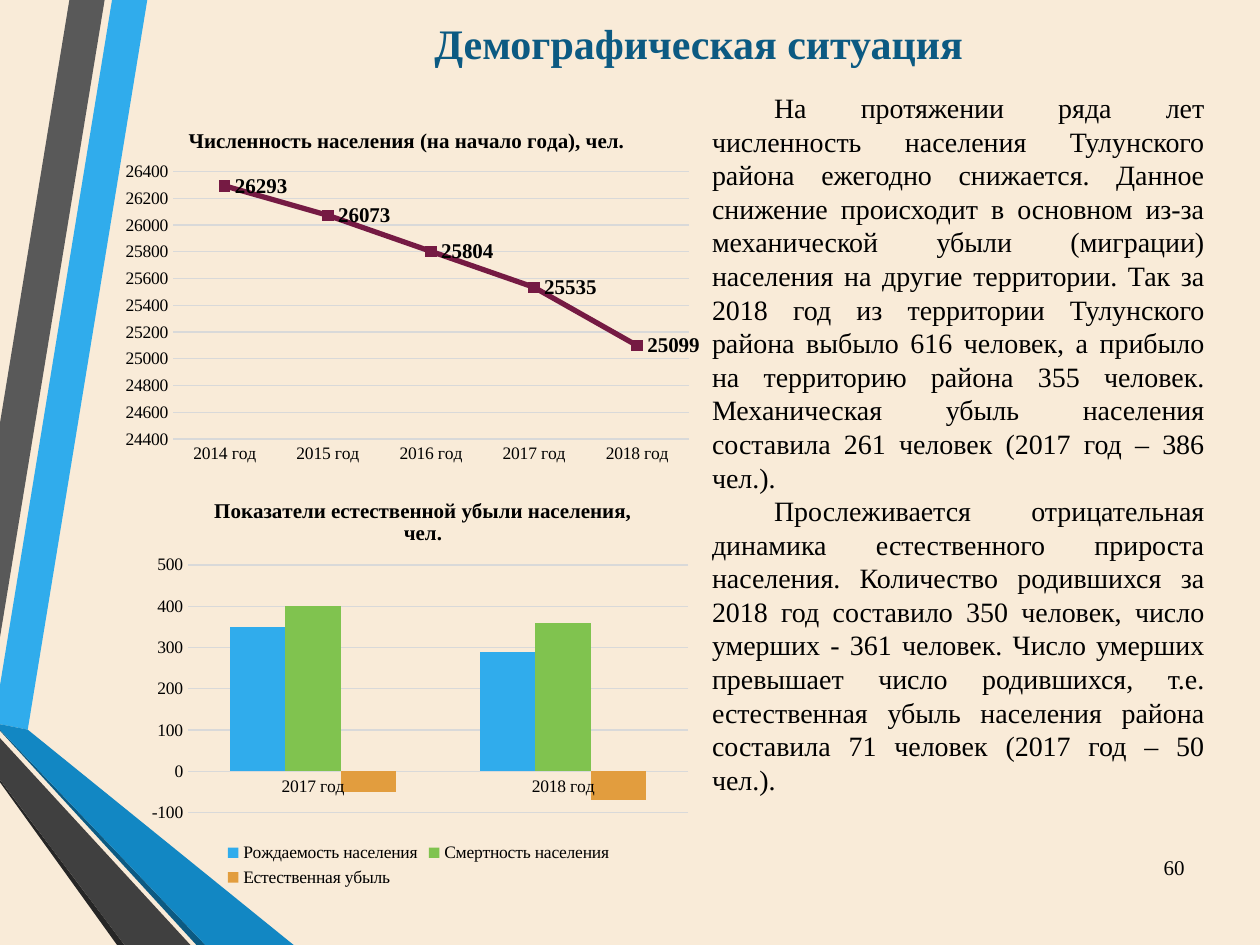
from lxml import etree
from pptx import Presentation, util as u
from pptx.chart.data import CategoryChartData
from pptx.dml.color import RGBColor
from pptx.enum import chart as c, text as t
from pptx.oxml import parse_xml
from pptx.oxml.ns import nsdecls, qn

Cm, Pt = u.Cm, u.Pt
COLORS = {
    "background": "F9EBD8", "text": "000000", "title": "0C5A82", "grid": "D9D9D9",
    "sky": "30ACEC", "blue": "1287C3", "gray": "595959", "dark": "404040",
    "black": "262626", "green": "80C34F", "orange": "E29D3E", "plum": "751A43",
}
RGB = {name: RGBColor.from_string(value) for name, value in COLORS.items()}


def set_font(font, size, color="text", bold=False):
    values = {"name": "Times New Roman", "size": Pt(size), "bold": bold}
    for name, value in values.items():
        setattr(font, name, value)
    font.color.rgb = RGB[color]


def set_layout(element, x, y, size=None):
    """Place a chart title or plot area by fractions of the chart."""
    for old in element.findall(qn("c:layout")):
        element.remove(old)
    target = '<c:layoutTarget val="inner"/>' if size else ""
    fractions = {"x": x, "y": y}
    if size:
        fractions.update(w=size[0], h=size[1])
    modes = '<c:xMode val="edge"/><c:yMode val="edge"/>'
    places = "".join(f'<c:{key} val="{value}"/>' for key, value in fractions.items())
    layout = parse_xml(f'<c:layout {nsdecls("c")}><c:manualLayout>{target}{modes}{places}'
                       "</c:manualLayout></c:layout>")
    text = element.find(qn("c:tx"))
    element.insert(0 if text is None else element.index(text) + 1, layout)


presentation = Presentation()
presentation.slide_width, presentation.slide_height = Cm(25.4), Cm(19.05)
slide = presentation.slides.add_slide(presentation.slide_layouts[1])
slide.background.fill.solid()
slide.background.fill.fore_color.rgb = RGB["background"]

# Ribbons along the left edge, corners in centimetres
ribbons = [
    ("sky", [(0, 13.82), (0, 14.6), (0.56, 14.71), (2.97, 0), (2.26, 0)]),
    ("gray", [(2.11, 0), (1.4, 0), (0, 8.53), (0, 12.85)]),
    ("black", [(0, 15.72), (0, 15.77), (2.36, 19.05), (2.51, 19.05)]),
    ("title", [(0, 14.71), (0, 14.73), (3.96, 19.05), (4.14, 19.05)]),
    ("blue", [(0, 14.71), (4.14, 19.05), (5.92, 19.05), (0.56, 14.71), (0, 14.6)]),
    ("dark", [(0, 15.72), (2.51, 19.05), (3.84, 19.05), (0, 14.88)]),
]
for color, corners in ribbons:
    points = [(Cm(x), Cm(y)) for x, y in corners]
    builder = slide.shapes.build_freeform(*points[0])
    builder.add_line_segments(points[1:], close=True)
    shape = builder.convert_to_shape()
    shape.shadow.inherit = False
    shape.fill.solid()
    shape.fill.fore_color.rgb = RGB[color]
    shape.line.fill.background()

# Title, body text and page number
body_text = [
    "На протяжении ряда лет численность населения Тулунского района ежегодно снижается. "
    "Данное снижение происходит в основном из-за механической убыли (миграции) населения "
    "на другие территории. Так за 2018 год из территории Тулунского района выбыло 616 человек, "
    "а прибыло на территорию района 355 человек. Механическая убыль населения составила "
    "261 человек (2017 год – 386 чел.).",
    "Прослеживается отрицательная динамика естественного прироста населения. Количество "
    "родившихся за 2018 год составило 350 человек, число умерших - 361 человек. Число умерших "
    "превышает число родившихся, т.е. естественная убыль населения района составила "
    "71 человек (2017 год – 50 чел.).",
]
title, body = slide.placeholders
number = slide.shapes.add_textbox(0, 0, 0, 0)
middle, top = t.MSO_ANCHOR.MIDDLE, t.MSO_ANCHOR.TOP
text_boxes = [
    (title, (2.77, 0, 22.63, 1.73), ["Демографическая ситуация"], middle,
     t.PP_ALIGN.CENTER, (24, "title", True)),
    (body, (14.1, 1.7, 10.44, 15), body_text, top, t.PP_ALIGN.JUSTIFY, (16,)),
    (number, (22.94, 16.97, 1.19, 1.02), ["60"], middle, t.PP_ALIGN.RIGHT, (12,)),
]
for shape, place, lines, anchor, alignment, font in text_boxes:
    shape.left, shape.top, shape.width, shape.height = map(Cm, place)
    frame = shape.text_frame
    frame.text = "\n".join(lines)
    frame.word_wrap, frame.auto_size = True, t.MSO_AUTO_SIZE.NONE
    frame.vertical_anchor = anchor
    for paragraph in frame.paragraphs:
        paragraph.alignment = alignment
        paragraph.space_before = Pt(0)
        set_font(paragraph.runs[0].font, *font)
for paragraph in body.text_frame.paragraphs:
    paragraph.line_spacing = Pt(19.2)
    properties = paragraph._p.get_or_add_pPr()
    properties.set("marL", "0")
    properties.set("indent", str(Cm(1.25)))
    etree.SubElement(properties, qn("a:buNone"))

# Charts
charts = [
    {"type": c.XL_CHART_TYPE.COLUMN_CLUSTERED, "place": (2.77, 9.53, 11.33, 8.46),
     "title": "Показатели естественной убыли населения, чел.", "title_at": (0.13, 0.05),
     "plot": (0.09, 0.22, (0.89, 0.59)), "scale": (-100, 500, 100),
     "categories": ["2017 год", "2018 год"],
     "series": [("Рождаемость населения", [350, 290], "sky"),
                ("Смертность населения", [400, 360], "green"),
                ("Естественная убыль", [-50, -70], "orange")]},
    {"type": c.XL_CHART_TYPE.LINE_MARKERS_STACKED, "place": (2.31, 2.13, 11.81, 7.39),
     "title": "Численность населения (на начало года), чел.", "title_at": (0.12, 0.05),
     "plot": (0.1, 0.18, (0.88, 0.73)), "scale": (24400, 26400, 200),
     "categories": [f"{year} год" for year in range(2014, 2019)],
     "series": [("Численность населения", [26293, 26073, 25804, 25535, 25099], "plum")]},
]
for item in charts:
    data = CategoryChartData()
    data.categories = item["categories"]
    for name, values, _ in item["series"]:
        data.add_series(name, values)
    chart = slide.shapes.add_chart(item["type"], *map(Cm, item["place"]), data).chart
    set_font(chart.font, 10)
    chart.has_title = True
    chart.chart_title.text_frame.text = item["title"]
    set_font(chart.chart_title.text_frame.paragraphs[0].runs[0].font, 12, bold=True)
    chart.chart_title.include_in_layout = False
    set_layout(chart.chart_title._element, *item["title_at"])
    set_layout(chart._chartSpace.chart.plotArea, *item["plot"])

    for axis in (chart.category_axis, chart.value_axis):
        axis.major_tick_mark = axis.minor_tick_mark = c.XL_TICK_MARK.NONE
        axis.format.line.fill.background()
        set_font(axis.tick_labels.font, 10)
    axis.minimum_scale, axis.maximum_scale, axis.major_unit = item["scale"]
    axis.has_major_gridlines = True
    grid = axis.major_gridlines.format.line
    grid.color.rgb, grid.width = RGB["grid"], Pt(0.75)

    plot = chart.plots[0]
    plot.vary_by_categories = False
    chart.has_legend = len(item["series"]) > 1
    if chart.has_legend:
        plot.gap_width, plot.overlap = 150, 0
        chart.legend.position = c.XL_LEGEND_POSITION.BOTTOM
        chart.legend.include_in_layout = False
        set_font(chart.legend.font, 10)
        for series, (_, _, color) in zip(plot.series, item["series"]):
            series.invert_if_negative = False
            series.format.fill.solid()
            series.format.fill.fore_color.rgb = RGB[color]
    else:
        axis_line = chart.category_axis.format.line
        axis_line.color.rgb, axis_line.width = RGB["grid"], Pt(0.75)
        series = plot.series[0]
        series.smooth = False
        series.format.line.color.rgb, series.format.line.width = RGB["plum"], Pt(3)
        series.marker.style, series.marker.size = c.XL_MARKER_STYLE.SQUARE, 6
        series.marker.format.fill.solid()
        series.marker.format.fill.fore_color.rgb = RGB["plum"]
        series.marker.format.line.color.rgb = RGB["plum"]
        labels = series.data_labels
        labels.show_value, labels.position = True, c.XL_LABEL_POSITION.RIGHT
        set_font(labels.font, 12, bold=True)

presentation.save("out.pptx")
